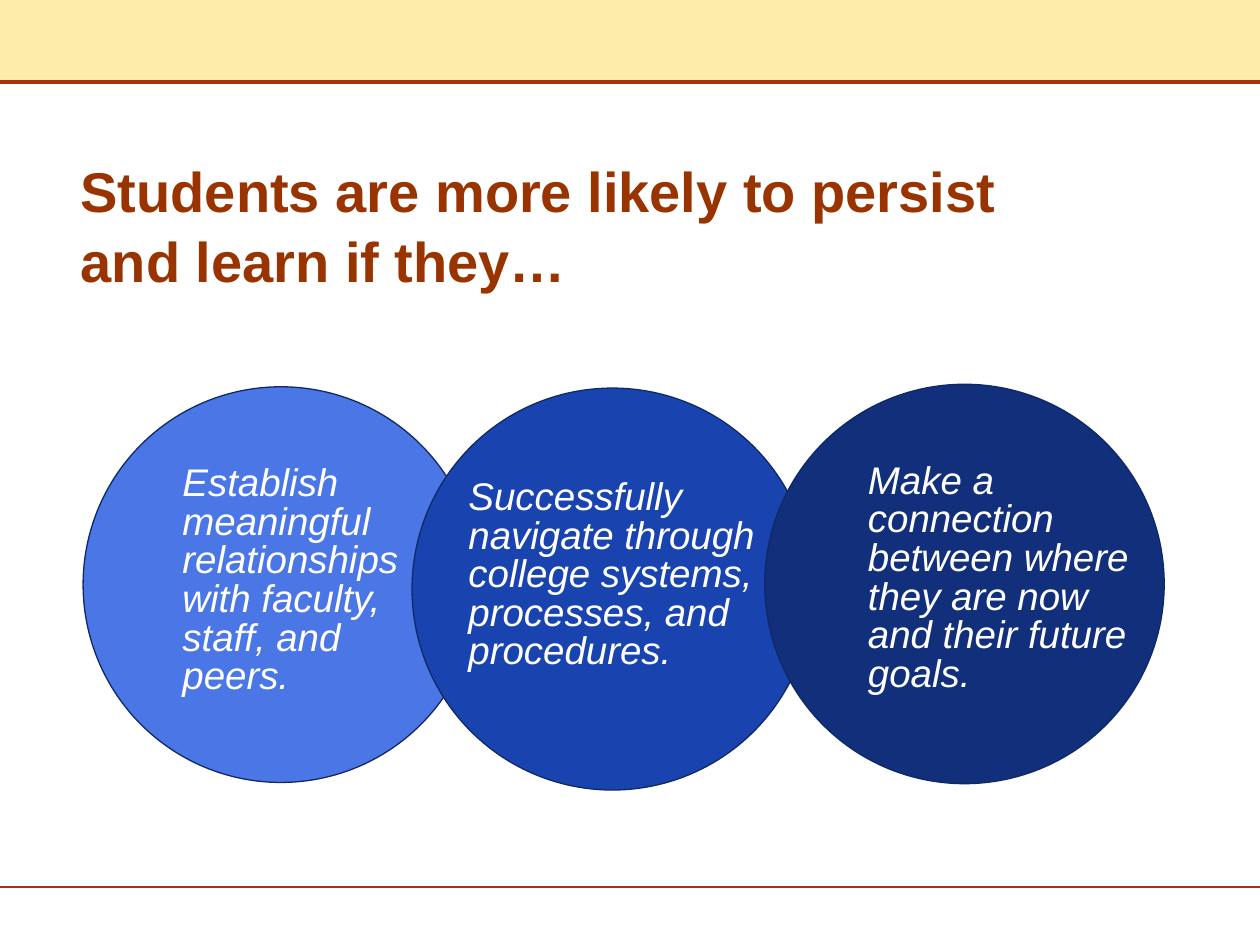
from lxml import etree
from pptx import Presentation
from pptx.dml.color import RGBColor
from pptx.enum.shapes import MSO_CONNECTOR, MSO_SHAPE
from pptx.enum.text import MSO_ANCHOR, MSO_AUTO_SIZE, PP_ALIGN
from pptx.oxml.ns import qn
from pptx.util import Inches, Pt

RECTANGLE, OVAL = MSO_SHAPE.RECTANGLE, MSO_SHAPE.OVAL
STRAIGHT = MSO_CONNECTOR.STRAIGHT
BOTTOM, TOP = MSO_ANCHOR.BOTTOM, MSO_ANCHOR.TOP
LEFT = PP_ALIGN.LEFT
NO_FIT, GROW = MSO_AUTO_SIZE.NONE, MSO_AUTO_SIZE.SHAPE_TO_FIT_TEXT

FONT = "Arial"
COLORS = {
    "band": "FEECAB",
    "rule": "AD2F0D",
    "title": "993300",
    "outline": "102966",
    "light": "4A76E6",
    "medium": "1944B0",
    "dark": "112F7A",
    "white": "FFFFFF",
}
TITLE = "Students are more likely to persist and learn if they…"
CIRCLES = [
    ((0.66, 3.07, 3.14, 3.14), "light"),
    ((3.27, 3.08, 3.18, 3.19), "medium"),
    ((6.07, 3.05, 3.17, 3.17), "dark"),
]
REASONS = [
    ((3.12, 3.77, 3.76, 1.58),
     ["Successfully", "navigate through", "college systems,",
      "processes, and", "procedures."]),
    ((0.85, 3.66, 3.43, 1.88),
     ["Establish", "meaningful", "relationships", "with faculty,",
      "staff, and", "peers."]),
    ((6.29, 3.64, 3.58, 1.88),
     ["Make a", "connection", "between where", "they are now",
      "and their future", "goals."]),
]


def color(name):
    """Return the named palette color."""
    return RGBColor.from_string(COLORS[name])


def lengths(box):
    """Convert a box in inches to lengths."""
    return [Inches(value) for value in box]


def write(para, text, size, ink, bold=False, italic=False, spacing=1.0):
    """Put one formatted span of text in a paragraph."""
    para.alignment = LEFT
    para.line_spacing = spacing
    para.space_before = Pt(0)
    span = para.add_run()
    span.text = text
    span.font.name = FONT
    span.font.size = Pt(size)
    span.font.bold = bold
    span.font.italic = italic
    span.font.color.rgb = color(ink)


def add_rule(page, top, width):
    """Draw a rule across the page."""
    rule = page.shapes.add_connector(
        STRAIGHT, 0, Inches(top), Inches(10), Inches(top))
    rule.line.color.rgb = color("rule")
    rule.line.width = Pt(width)
    etree.SubElement(rule._element.spPr, qn("a:effectLst"))


def add_solid(page, kind, box, fill, outline=None):
    """Draw a filled shape with an optional outline."""
    shape = page.shapes.add_shape(kind, *lengths(box))
    shape.shadow.inherit = False
    shape.fill.solid()
    shape.fill.fore_color.rgb = color(fill)
    if outline:
        shape.line.color.rgb = color(outline)
        shape.line.width = Pt(0.75)
    else:
        shape.line.fill.background()


def add_frame(page):
    """Draw the top band and the two rules."""
    add_solid(page, RECTANGLE, (0, 0, 10, 0.64), "band")
    add_rule(page, 0.65, 2.25)
    add_rule(page, 7.04, 1.5)


def add_title(page, box):
    """Place and fill the title placeholder."""
    title = page.shapes.title
    title.left, title.top, title.width, title.height = lengths(box)
    frame = title.text_frame
    frame.word_wrap = True
    frame.auto_size = NO_FIT
    frame.vertical_anchor = BOTTOM
    write(frame.paragraphs[0], TITLE, 32, "title", bold=True, spacing=Pt(40))


def add_reason(page, box, lines):
    """Place one reason as a stack of indented lines."""
    frame = page.shapes.add_textbox(*lengths(box)).text_frame
    frame.word_wrap = True
    frame.auto_size = GROW
    frame.vertical_anchor = TOP
    for index, line in enumerate(lines):
        para = frame.add_paragraph() if index else frame.paragraphs[0]
        para.level = 1
        properties = para._p.get_or_add_pPr()
        properties.set("marL", str(Inches(0.99)))
        properties.set("indent", str(Inches(-0.49)))
        write(para, line, 22, "white", italic=True, spacing=0.8)
        para.space_after = Pt(0.9)


def main():
    """Build and save the deck."""
    deck = Presentation()
    deck.slide_width, deck.slide_height = Inches(10), Inches(7.5)
    page = deck.slides.add_slide(deck.slide_layouts[5])
    add_frame(page)
    add_title(page, (0.54, 1.2, 8.35, 1.18))
    for box, fill in CIRCLES:
        add_solid(page, OVAL, box, fill, "outline")
    for box, lines in REASONS:
        add_reason(page, box, lines)
    deck.save("out.pptx")


if __name__ == "__main__":
    main()
